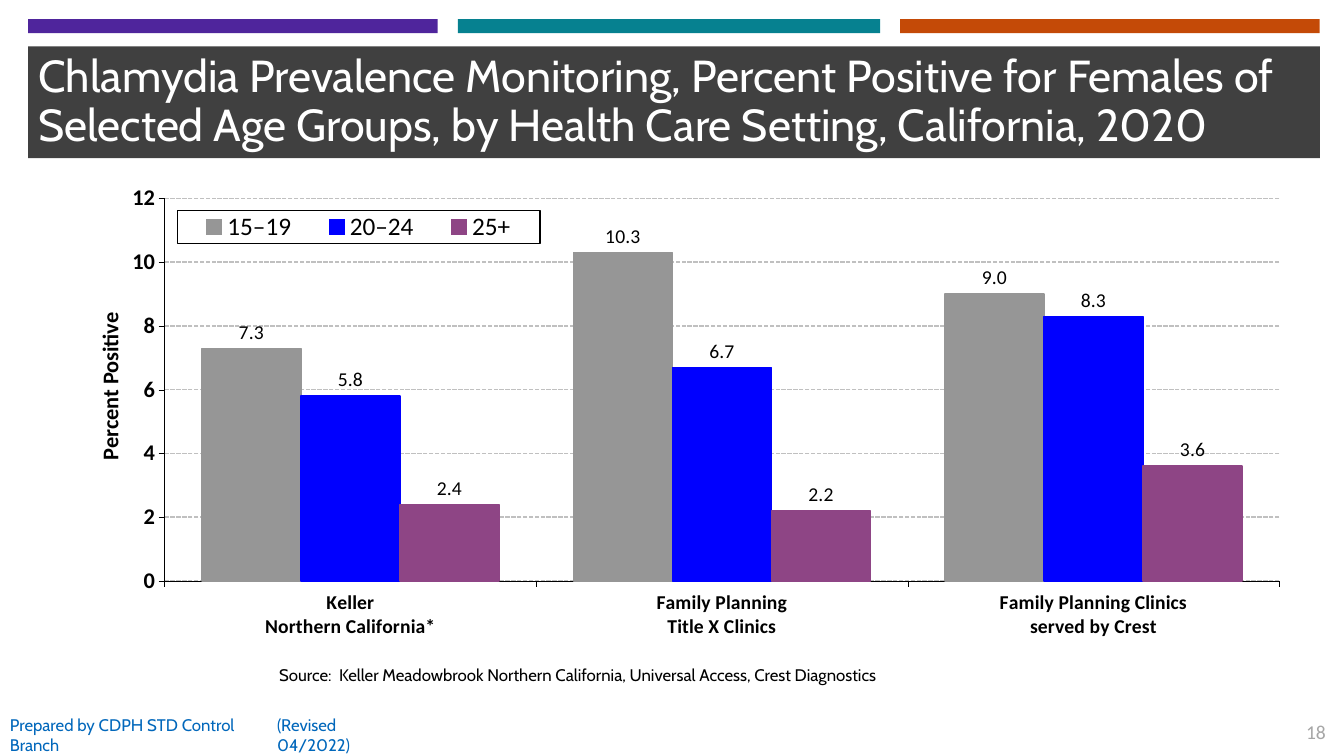
from lxml.etree import SubElement
from pptx import Presentation
from pptx.chart.data import CategoryChartData as Data
from pptx.dml.color import RGBColor
from pptx.enum.chart import XL_CHART_TYPE as Kind, XL_LABEL_POSITION as Spot
from pptx.enum.chart import XL_LEGEND_POSITION as Side, XL_TICK_MARK as Tick
from pptx.enum.dml import MSO_LINE as Dash
from pptx.enum.shapes import MSO_SHAPE as Form
from pptx.enum.text import MSO_ANCHOR as Anchor, MSO_AUTO_SIZE as Fit, PP_ALIGN as Align
from pptx.oxml import parse_xml
from pptx.oxml.ns import qn
from pptx.util import Inches, Pt

BLACK = RGBColor(0x00, 0x00, 0x00)
WHITE = RGBColor(0xFF, 0xFF, 0xFF)
DARK = RGBColor(0x40, 0x40, 0x40)
VIOLET = RGBColor(0x4F, 0x25, 0x9C)
TEAL = RGBColor(0x06, 0x81, 0x90)
RUST = RGBColor(0xC4, 0x4A, 0x07)
SKY = RGBColor(0x01, 0x67, 0xBB)
PALE = RGBColor(0xA6, 0xA6, 0xA6)
GRID = RGBColor(0xC0, 0xC0, 0xC0)
GRAY = RGBColor(0x96, 0x96, 0x96)
BLUE = RGBColor(0x00, 0x00, 0xFF)
PLUM = RGBColor(0x8E, 0x45, 0x85)

GROUPS = ["Keller\nNorthern California*", "Family Planning\nTitle X Clinics",
          "Family Planning Clinics\nserved by Crest"]
AGES = [("15–19", (7.3, 10.3, 9.0), GRAY), ("20–24", (5.8, 6.7, 8.3), BLUE),
        ("25+", (2.4, 2.2, 3.6), PLUM)]
FRAME = ('<c:spPr xmlns:c="http://schemas.openxmlformats.org/drawingml/2006/chart" '
         'xmlns:a="http://schemas.openxmlformats.org/drawingml/2006/main"><a:noFill/>'
         '<a:ln w="9525"><a:solidFill><a:srgbClr val="000000"/></a:solidFill></a:ln></c:spPr>')


def part(box, x, y, w, h):
    left, top, wide, high = box
    return (int(left + wide * x / 100), int(top + high * y / 100),
            int(wide * w / 100), int(high * h / 100))


def style(font, size, color=BLACK, face="Calibri", bold=False):
    font.size, font.name, font.bold = Pt(size), face, bold
    font.color.rgb = color


def write(shape, text, size=12, color=BLACK, face="Cabin", align=Align.LEFT,
          anchor=Anchor.MIDDLE, wrap=True, fit=Fit.NONE):
    frame = shape.text_frame
    frame.word_wrap, frame.auto_size, frame.vertical_anchor = wrap, fit, anchor
    para = frame.paragraphs[0]
    para.alignment = align
    run = para.add_run()
    run.text = text
    style(run.font, size, color, face)
    return para


def paint(shape, color):
    shape.fill.solid()
    shape.fill.fore_color.rgb = color
    shape.line.fill.background()


def header(slide, box):
    for x, w, color in ((0, 31.7, VIOLET), (33.26, 32.7, TEAL), (67.52, 32.48, RUST)):
        stripe = slide.shapes.add_shape(Form.RECTANGLE, *part(box, x, 0, w, 10.15))
        stripe.shadow.inherit = False
        paint(stripe, color)
    title = slide.shapes.title
    title.left, title.top, title.width, title.height = part(box, 0, 19.57, 100, 80.43)
    paint(title, DARK)
    para = write(title, "Chlamydia Prevalence Monitoring, Percent Positive for Females of "
                 "Selected Age Groups, by Health Care Setting, California, 2020",
                 size=32, color=WHITE)
    para.line_spacing = 0.9


def place(owner, index, inner=False, **sizes):
    for old in owner.findall(qn("c:layout")):
        owner.remove(old)
    layout = owner.makeelement(qn("c:layout"))
    owner.insert(index, layout)
    manual = SubElement(layout, qn("c:manualLayout"))
    if inner:
        SubElement(manual, qn("c:layoutTarget")).set("val", "inner")
    for key in "xy":
        SubElement(manual, qn(f"c:{key}Mode")).set("val", "edge")
    for key, size in sizes.items():
        SubElement(manual, qn(f"c:{key}")).set("val", str(size))


def axes(chart):
    for axis, size in ((chart.category_axis, 14), (chart.value_axis, 16)):
        axis.major_tick_mark, axis.minor_tick_mark = Tick.OUTSIDE, Tick.NONE
        style(axis.tick_labels.font, size, bold=True)
        axis.format.line.color.rgb = BLACK
        axis.format.line.width = Pt(0.25)
    axis.minimum_scale, axis.maximum_scale, axis.major_unit = 0, 12, 2
    axis.tick_labels.number_format = "#,##0"
    axis.tick_labels.number_format_is_linked = False
    line = axis.major_gridlines.format.line
    line.color.rgb, line.width, line.dash_style = GRID, Pt(1.06), Dash.SQUARE_DOT
    name = axis.axis_title
    run = name.text_frame.paragraphs[0].add_run()
    run.text = "Percent Positive"
    style(run.font, 16, bold=True)
    place(name._element, 1, x=0.036, y=0.285)


def key(chart):
    chart.has_legend = True
    legend = chart.legend
    legend.position, legend.include_in_layout = Side.RIGHT, False
    style(legend.font, 18)
    node = legend._element
    place(node, 1, x=0.105, y=0.092, w=0.289, h=0.065)
    node.find(qn("c:txPr")).addprevious(parse_xml(FRAME))


def graph(slide, box):
    data = Data(number_format="0.0")
    data.categories = GROUPS
    for name, rates, color in AGES:
        data.add_series(name, rates)
    chart = slide.shapes.add_chart(Kind.COLUMN_CLUSTERED, *box, data).chart
    chart.has_title = False
    style(chart.font, 19, face="Times New Roman", bold=True)
    plot = chart.plots[0]
    plot.gap_width, plot.overlap, plot.vary_by_categories = 75, 0, False
    for bars, (name, rates, color) in zip(plot.series, AGES):
        bars.format.fill.solid()
        bars.format.fill.fore_color.rgb = color
        bars.format.line.color.rgb = color
        bars.format.line.width = Pt(1.06)
        tags = bars.data_labels
        tags.show_value, tags.position = True, Spot.OUTSIDE_END
        tags.number_format, tags.number_format_is_linked = "0.0", False
        style(tags.font, 14)
    axes(chart)
    key(chart)
    area = chart._chartSpace.find(qn("c:chart")).find(qn("c:plotArea"))
    place(area, 0, True, x=0.095, y=0.069, w=0.888, h=0.75)


def note(slide, box, text, **form):
    return write(slide.shapes.add_textbox(*box), text, **form)


def footer(slide, box):
    para = note(slide, part(box, 20.03, 0, 63.77, 31.58),
                "Source:  Keller Meadowbrook Northern California, Universal Access, "
                "Crest Diagnostics", anchor=Anchor.TOP, fit=Fit.SHAPE_TO_FIT_TEXT)
    para.space_after = Pt(1)
    note(slide, part(box, 0, 56.84, 21, 42.11),
         "Prepared by CDPH STD Control Branch", color=SKY)
    note(slide, part(box, 19.88, 56.84, 11.25, 42.11), "(Revised 04/2022)", color=SKY)
    note(slide, part(box, 96.17, 56.84, 3.23, 35.79), "18", size=14, color=PALE,
         face="Calibri", align=Align.RIGHT, anchor=Anchor.TOP, wrap=False,
         fit=Fit.SHAPE_TO_FIT_TEXT)


def main():
    deck = Presentation()
    deck.slide_width, deck.slide_height = Inches(13.33), Inches(7.5)
    page = (0, 0, deck.slide_width, deck.slide_height)
    slide = deck.slides.add_slide(deck.slide_layouts[5])
    header(slide, part(page, 2.1, 2.53, 96.1, 18.4))
    graph(slide, part(page, 3.38, 21.6, 93.4, 67.47))
    footer(slide, part(page, 0, 87.33, 100, 12.67))
    deck.save("out.pptx")


if __name__ == "__main__":
    main()
